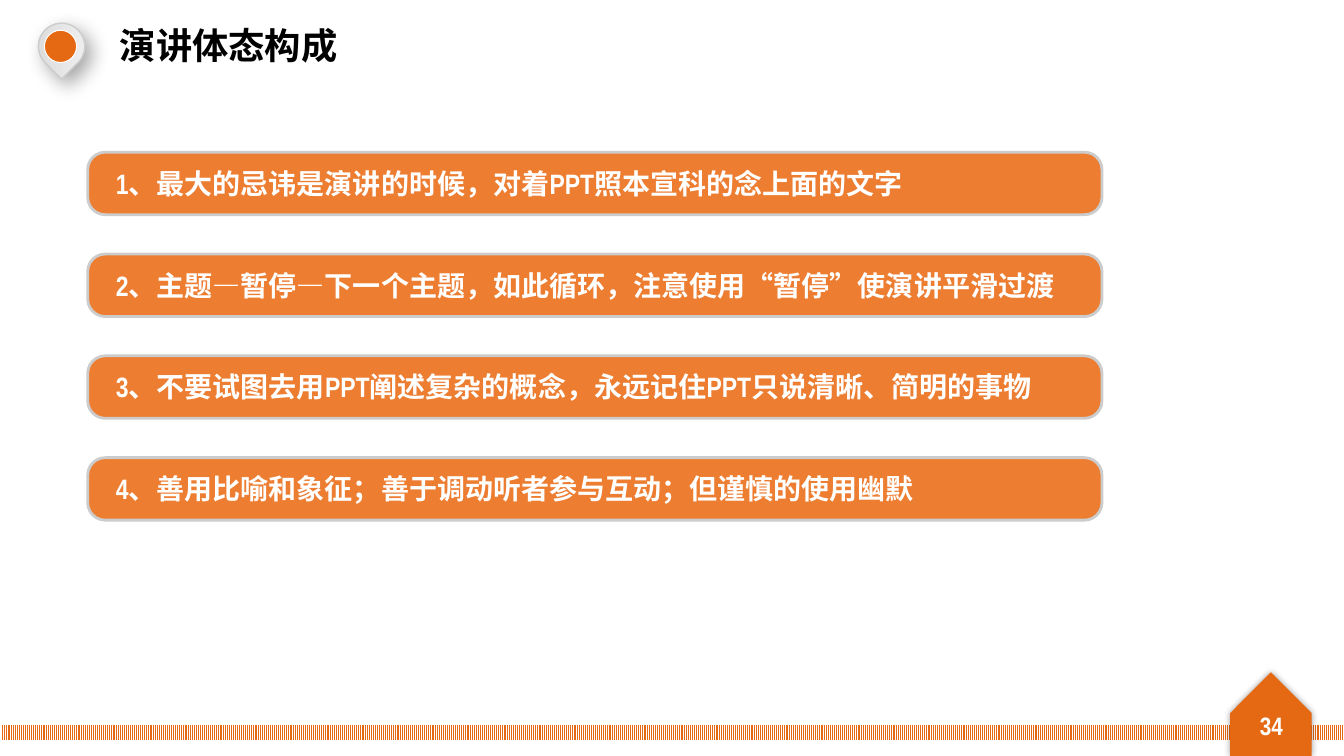
from lxml import etree
from pptx import Presentation
from pptx.dml.color import RGBColor
from pptx.enum.dml import MSO_PATTERN
from pptx.enum.shapes import MSO_SHAPE
from pptx.enum.text import MSO_ANCHOR, PP_ALIGN
from pptx.oxml.ns import qn
from pptx.util import Inches, Pt

# Content
TITLE = "演讲体态构成"
PAGE = "34"
TIPS = [
    "1、最大的忌讳是演讲的时候，对着PPT照本宣科的念上面的文字",
    "2、主题—暂停—下一个主题，如此循环，注意使用“暂停”使演讲平滑过渡",
    "3、不要试图去用PPT阐述复杂的概念，永远记住PPT只说清晰、简明的事物",
    "4、善用比喻和象征；善于调动听者参与互动；但谨慎的使用幽默",
]
COLORS = {"bar": "ED7D31", "accent": "E56913", "edge": "CCCCCC", "white": "FFFFFF",
          "black": "000000", "dark": "D9D9D9", "light": "F2F2F2"}
FONT = "Arial Narrow"

deck = Presentation()
deck.slide_width, deck.slide_height = Inches(13.33), Inches(7.5)
slide = deck.slides.add_slide(deck.slide_layouts[6])


def color(name):
    return RGBColor.from_string(COLORS[name])


def add_box(kind, *place, fill=None, line=None, width=0.75):
    shape = slide.shapes.add_shape(kind, *map(Inches, place))
    shape.shadow.inherit = False
    if fill:
        shape.fill.solid()
        shape.fill.fore_color.rgb = color(fill)
    if line:
        shape.line.color.rgb = color(line)
        shape.line.width = Pt(width)
    else:
        shape.line.fill.background()
    return shape


def add_shadow(shape, alpha, blur, dist=0, angle=0):
    effects = shape._element.spPr.find(qn("a:effectLst"))
    outer = etree.SubElement(effects, qn("a:outerShdw"), blurRad=str(Pt(blur)),
                             dist=str(Pt(dist)), dir=str(angle * 60000),
                             algn="ctr", rotWithShape="0")
    tint = etree.SubElement(outer, qn("a:srgbClr"), val=COLORS["black"])
    etree.SubElement(tint, qn("a:alpha"), val=str(alpha * 1000))


def add_text(text, *place, size=20, ink="white", align=PP_ALIGN.LEFT,
             anchor=MSO_ANCHOR.TOP, spacing=None):
    frame = slide.shapes.add_textbox(*map(Inches, place)).text_frame
    frame.word_wrap = True
    frame.vertical_anchor = anchor
    para = frame.paragraphs[0]
    para.alignment = align
    para.line_spacing = spacing
    run = para.add_run()
    run.text = text
    run.font.name, run.font.size, run.font.bold = FONT, Pt(size), True
    run.font.color.rgb = color(ink)


# Map pin beside the title
pin = add_box(MSO_SHAPE.TEAR, 0.38, 0.23, 0.46, 0.46, line="edge", width=1)
pin.rotation = 135
pin.fill.gradient()
pin.fill.gradient_angle = 135
for stop, tone in zip(pin.fill.gradient_stops, ("dark", "light")):
    stop.color.rgb = color(tone)
add_shadow(pin, 35, 14, 7, 45)
add_box(MSO_SHAPE.OVAL, 0.44, 0.3, 0.32, 0.32, fill="accent", line="white")

# Striped footer and page marker
strip = add_box(MSO_SHAPE.RECTANGLE, 0, 7.19, 13.33, 0.16, line="white")
strip.fill.patterned()
strip.fill.pattern = MSO_PATTERN.NARROW_VERTICAL
strip.fill.fore_color.rgb = color("accent")
strip.fill.back_color.rgb = color("white")
marker = add_box(MSO_SHAPE.PENTAGON, 12.19, 6.68, 0.83, 0.81, fill="accent")
marker.rotation = 270
add_shadow(marker, 40, 5)

# Title and page number
add_text(TITLE, 1.09, 0.3, 5.11, 0.43, size=25.9, ink="black", spacing=0.7)
add_text(PAGE, 12.27, 6.9, 0.68, 0.59, size=18, align=PP_ALIGN.CENTER,
         anchor=MSO_ANCHOR.MIDDLE)

# Tip bars at an equal pitch
for i, tip in enumerate(TIPS):
    top = 1.51 + i * 1.01
    bar = add_box(MSO_SHAPE.ROUNDED_RECTANGLE, 0.87, top, 10.06, 0.62,
                  fill="bar", line="edge", width=2)
    bar.adjustments[0] = 0.28
    add_text(tip, 1.05, top + 0.09, 9.88, 0.44)

deck.save("out.pptx")
